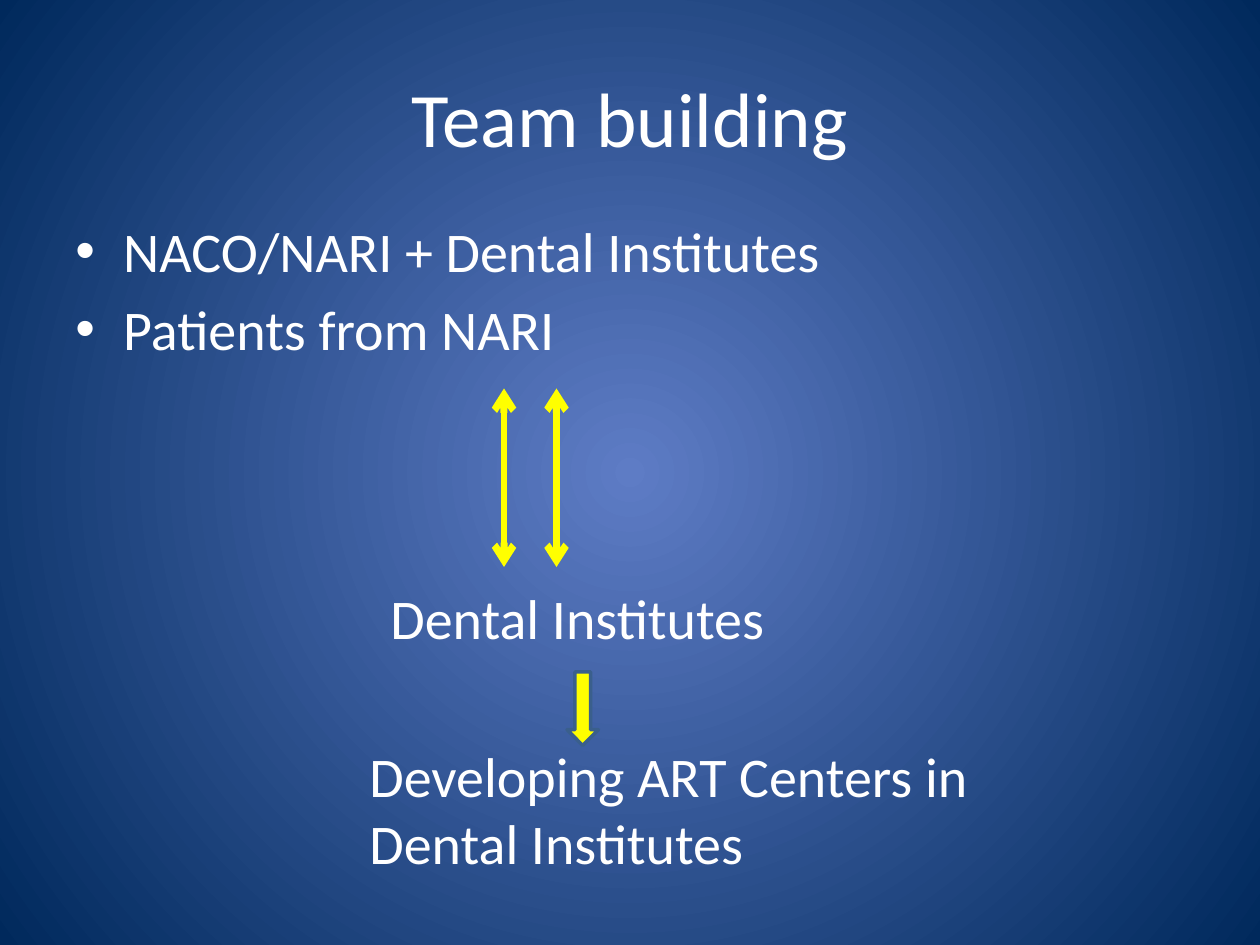
from dataclasses import dataclass

from lxml.etree import SubElement
from pptx import Presentation
from pptx.dml.color import RGBColor
from pptx.enum.shapes import MSO_CONNECTOR, MSO_SHAPE
from pptx.enum.text import MSO_ANCHOR, MSO_AUTO_SIZE, PP_ALIGN
from pptx.oxml.ns import qn
from pptx.util import Inches, Pt


@dataclass(frozen=True)
class Theme:
    """Colours, font and sizes of the deck."""

    glow: str = "5E7CC5"
    edge: str = "00295C"
    text: str = "FFFFFF"
    accent: str = "FFFF00"
    outline: str = "3A5F8C"
    font: str = "Calibri"
    title_size: float = 44
    body_size: float = 32
    connector_width: float = 4
    outline_width: float = 2


def color(value):
    """Turn a hex string into a colour."""
    return RGBColor.from_string(value)


def grid(*units):
    """Convert columns and rows of a 120 by 90 grid into lengths."""
    return [Inches(unit / 12) for unit in units]


class SlideBuilder:
    """Draws themed elements on the current slide."""

    def __init__(self, page, theme):
        """Keep the slide and its style."""
        self.page = page
        self.theme = theme

    def background(self):
        """Fill the slide with a circular gradient."""
        fill = self.page.background.fill
        fill.gradient()
        for stop, value in zip(fill.gradient_stops, (self.theme.glow, self.theme.edge)):
            stop.color.rgb = color(value)
        gradient = self.page.background._cSld.find(".//" + qn("a:gradFill"))
        gradient.remove(gradient.find(qn("a:lin")))
        circle = SubElement(gradient, qn("a:path"), path="circle")
        SubElement(circle, qn("a:fillToRect"), dict.fromkeys("ltrb", "50000"))

    def text(self, lines, area, size=None, align=PP_ALIGN.LEFT,
             anchor=MSO_ANCHOR.TOP, fit=MSO_AUTO_SIZE.NONE):
        """Add a wrapped text box and return its paragraphs."""
        frame = self.page.shapes.add_textbox(*grid(*area)).text_frame
        frame.word_wrap = True
        frame.auto_size = fit
        frame.vertical_anchor = anchor
        frame.text = "\n".join(lines)
        for para in frame.paragraphs:
            para.alignment = align
            for span in para.runs:
                span.font.name = self.theme.font
                span.font.size = Pt(size or self.theme.body_size)
                span.font.color.rgb = color(self.theme.text)
        return frame.paragraphs

    def title(self, line, area):
        """Add the centred slide title."""
        self.text([line], area, self.theme.title_size, PP_ALIGN.CENTER, MSO_ANCHOR.MIDDLE)

    def bullets(self, lines, area):
        """Add a bulleted list."""
        for para in self.text(lines, area):
            para.space_before = Pt(self.theme.body_size * 0.2)
            properties = para._p.get_or_add_pPr()
            properties.set("marL", str(Inches(0.38)))
            properties.set("indent", str(-Inches(0.38)))
            SubElement(properties, qn("a:buFont"), typeface="Arial")
            SubElement(properties, qn("a:buChar"), char="•")

    def label(self, line, area):
        """Add a text box that grows with its text."""
        self.text([line], area, fit=MSO_AUTO_SIZE.SHAPE_TO_FIT_TEXT)

    def double_arrow(self, start, end):
        """Add a line with an arrowhead at both ends."""
        arrow = self.page.shapes.add_connector(MSO_CONNECTOR.STRAIGHT, *grid(*start, *end))
        arrow.line.color.rgb = color(self.theme.accent)
        arrow.line.width = Pt(self.theme.connector_width)
        line = arrow.line._get_or_add_ln()
        for tag in ("a:headEnd", "a:tailEnd"):
            SubElement(line, qn(tag), type="arrow")
        SubElement(arrow._element.spPr, qn("a:effectLst"))

    def block_arrow(self, area):
        """Add a downward block arrow."""
        arrow = self.page.shapes.add_shape(MSO_SHAPE.DOWN_ARROW, *grid(*area))
        arrow.shadow.inherit = False
        arrow.fill.solid()
        arrow.fill.fore_color.rgb = color(self.theme.accent)
        arrow.line.color.rgb = color(self.theme.outline)
        arrow.line.width = Pt(self.theme.outline_width)


def main():
    """Build and save the team building slide."""
    deck = Presentation()
    deck.slide_width, deck.slide_height = grid(120, 90)
    builder = SlideBuilder(deck.slides.add_slide(deck.slide_layouts[6]), Theme())
    builder.background()
    builder.title("Team building", (6, 3.6, 108, 15))
    builder.bullets(["NACO/NARI + Dental Institutes", "Patients from NARI"],
                    (6, 20, 108, 59.4))
    for column in (48, 53):
        builder.double_arrow((column, 37), (column, 54))
    builder.label("Dental Institutes", (36, 55, 50, 7.7))
    builder.label("Developing ART Centers in Dental Institutes", (34, 70, 62, 14.2))
    builder.block_arrow((54, 64, 3, 7))
    deck.save("out.pptx")


if __name__ == "__main__":
    main()
